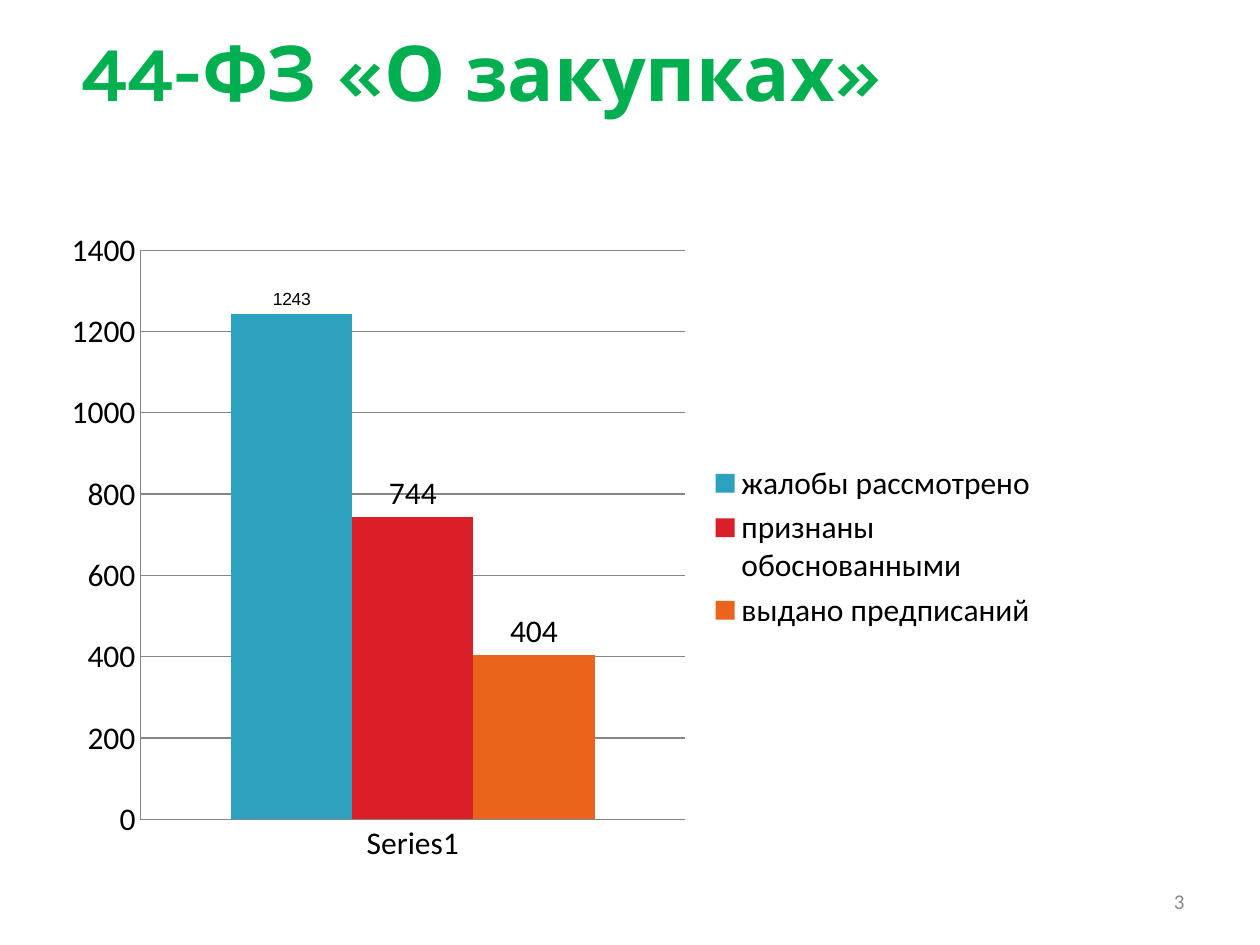
"""Build the slide on complaints under law 44-ФЗ as a clustered column chart."""
from pptx import Presentation
from pptx.chart.data import CategoryChartData
from pptx.dml.color import RGBColor
from pptx.enum.chart import XL_CHART_TYPE, XL_LABEL_POSITION, XL_LEGEND_POSITION, XL_TICK_MARK
from pptx.enum.text import MSO_ANCHOR, PP_ALIGN
from pptx.util import Inches, Pt

COLORS = {
    "title": "00B050", "number": "898989", "text": "000000", "line": "868686",
    "considered": "2DA2BF", "justified": "DA1F28", "orders": "EB641B",
}
TITLE = "44-ФЗ «О закупках»\v"
PAGE_NUMBER = "3"
CATEGORY = "Series1"
SERIES = [
    ("жалобы рассмотрено", 1243, "considered", "Arial", 10),
    ("признаны обоснованными", 744, "justified", "Calibri", 18),
    ("выдано предписаний", 404, "orders", "Calibri", 18),
]


def color(name):
    return RGBColor.from_string(COLORS[name])


def set_font(font, name, size, color_name, bold=False):
    font.name, font.size, font.bold = name, Pt(size), bold
    font.color.rgb = color(color_name)


def add_text(slide, text, box, align, font, left_inset=0.1):
    frame = slide.shapes.add_textbox(*map(Inches, box)).text_frame
    frame.word_wrap = True
    frame.vertical_anchor = MSO_ANCHOR.MIDDLE
    frame.margin_left = Inches(left_inset)
    paragraph = frame.paragraphs[0]
    paragraph.text = text
    paragraph.alignment = align
    set_font(paragraph.font, *font)


def add_complaints_chart(slide, box):
    data = CategoryChartData()
    data.categories = [CATEGORY]
    for name, value, *_ in SERIES:
        data.add_series(name, [value])
    chart = slide.shapes.add_chart(
        XL_CHART_TYPE.COLUMN_CLUSTERED, *map(Inches, box), data).chart
    set_font(chart.font, "Calibri", 18, "text")
    chart.has_title = False
    chart.has_legend = True
    chart.legend.position = XL_LEGEND_POSITION.RIGHT
    chart.legend.include_in_layout = False

    for axis in (chart.category_axis, chart.value_axis):
        axis.major_tick_mark = axis.minor_tick_mark = XL_TICK_MARK.NONE
        axis.format.line.color.rgb = color("line")
    values = chart.value_axis
    values.minimum_scale, values.maximum_scale, values.major_unit = 0, 1400, 200
    values.has_major_gridlines = True
    values.major_gridlines.format.line.color.rgb = color("line")

    plot = chart.plots[0]
    plot.gap_width, plot.overlap = 150, 0
    plot.vary_by_categories = False
    for series, (_, _, fill, font_name, size) in zip(plot.series, SERIES):
        series.format.fill.solid()
        series.format.fill.fore_color.rgb = color(fill)
        labels = series.data_labels
        labels.show_value = True
        labels.position = XL_LABEL_POSITION.OUTSIDE_END
        set_font(labels.font, font_name, size, "text")


def main():
    deck = Presentation()
    deck.slide_width, deck.slide_height = Inches(10), Inches(7.5)
    slide = deck.slides.add_slide(deck.slide_layouts[6])
    add_text(slide, PAGE_NUMBER, (7.17, 6.95, 2.33, 0.4), PP_ALIGN.RIGHT,
             ("Calibri", 12, "number"))
    add_text(slide, TITLE, (0.41, 0.3, 9, 1.25), PP_ALIGN.LEFT,
             ("Karla", 44, "title", True), left_inset=0.24)
    add_complaints_chart(slide, (0.41, 1.73, 7.93, 5.22))
    deck.save("out.pptx")


if __name__ == "__main__":
    main()
